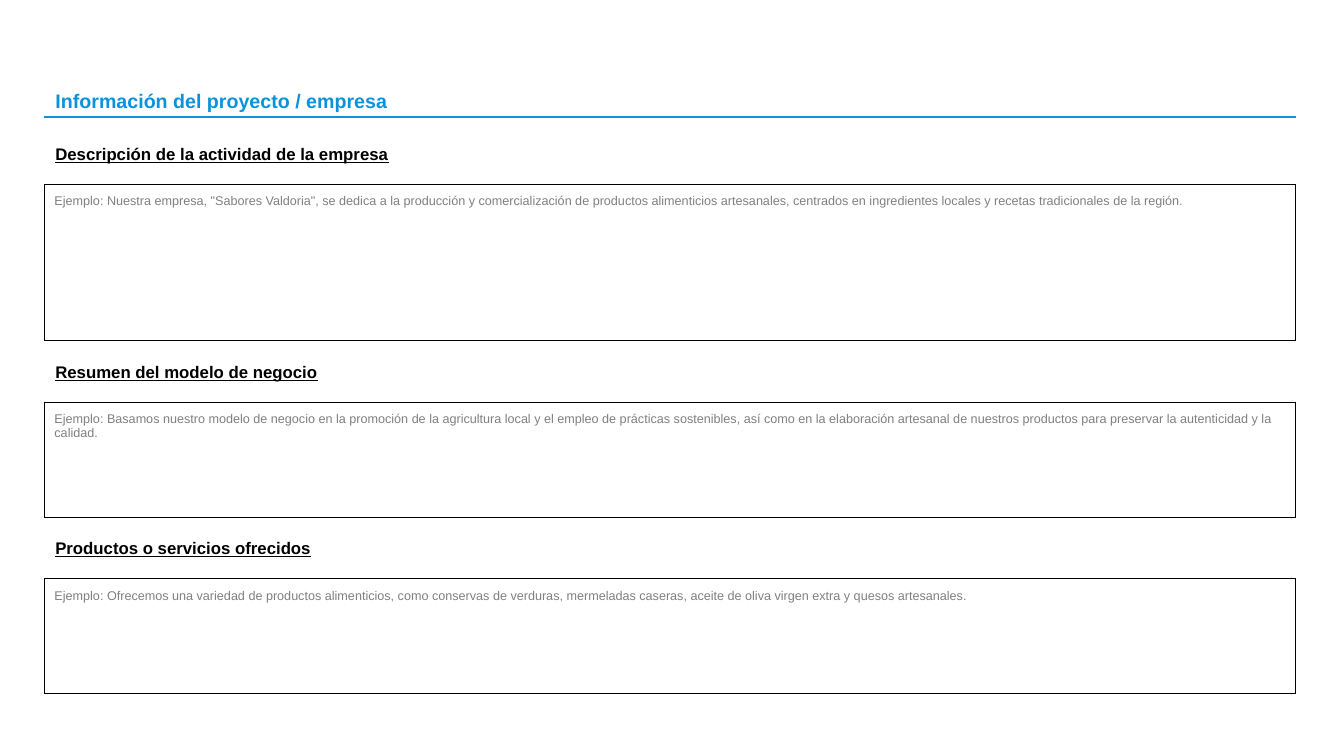
"""Build the project and company information form slide."""
from dataclasses import dataclass

import pptx
import pptx.dml.color
import pptx.enum.shapes
import pptx.enum.text
import pptx.oxml
import pptx.oxml.ns
import pptx.util
from pptx.util import Inches

TITLE = "Información del proyecto / empresa"
SECTIONS = [
    ("Descripción de la actividad de la empresa", 1.55,
     'Ejemplo: Nuestra empresa, "Sabores Valdoria", se dedica a la producción y '
     "comercialización de productos alimenticios artesanales, centrados en "
     "ingredientes locales y recetas tradicionales de la región."),
    ("Resumen del modelo de negocio", 1.14,
     "Ejemplo: Basamos nuestro modelo de negocio en la promoción de la agricultura "
     "local y el empleo de prácticas sostenibles, así como en la elaboración "
     "artesanal de nuestros productos para preservar la autenticidad y la calidad."),
    ("Productos o servicios ofrecidos", 1.14,
     "Ejemplo: Ofrecemos una variedad de productos alimenticios, como conservas de "
     "verduras, mermeladas caseras, aceite de oliva virgen extra y quesos artesanales."),
]


@dataclass(frozen=True)
class Theme:
    font: str = "Arial"
    accent: str = "0A92DD"
    ink: str = "000000"
    hint: str = "808080"
    paper: str = "FFFFFF"
    title_size: int = 14
    heading_size: int = 12
    hint_size: int = 9
    rule_width: float = 1.5
    border_width: int = 1


THEME = Theme()
LEFT, WIDTH = 0.44, 12.41
LABEL_LEFT, LABEL_WIDTH, LABEL_HEIGHT = 0.45, 4.46, 0.27
TITLE_TOP, RULE_TOP, FIRST_HEADING_TOP = 0.86, 1.16, 1.39
HEADING_TO_FIELD, FIELD_TO_HEADING = 0.44, 0.17
FIELD_INSET = 0.1


def color(value):
    return pptx.dml.color.RGBColor.from_string(value)


def write(frame, text, size, shade, bold=False, underline=False):
    frame.word_wrap = True
    para = frame.paragraphs[0]
    para.text = text
    para.alignment = pptx.enum.text.PP_ALIGN.LEFT
    font = para.font
    font.name, font.size = THEME.font, pptx.util.Pt(size)
    font.bold, font.underline = bold, underline
    font.color.rgb = color(shade)


def place_label(box, top, text, size, shade, underline=False):
    box.left, box.top = Inches(LABEL_LEFT), Inches(top)
    box.width, box.height = Inches(LABEL_WIDTH), Inches(LABEL_HEIGHT)
    frame = box.text_frame
    frame.auto_size = pptx.enum.text.MSO_AUTO_SIZE.NONE
    frame.vertical_anchor = pptx.enum.text.MSO_ANCHOR.MIDDLE
    write(frame, text, size, shade, True, underline)


def add_rule(page):
    rule = page.shapes.add_connector(
        pptx.enum.shapes.MSO_CONNECTOR.STRAIGHT,
        Inches(LEFT), Inches(RULE_TOP), Inches(LEFT + WIDTH), Inches(RULE_TOP))
    rule.line.color.rgb = color(THEME.accent)
    rule.line.width = pptx.util.Pt(THEME.rule_width)
    properties = rule._element.spPr
    properties.append(pptx.oxml.parse_xml(
        f"<a:effectLst {pptx.oxml.ns.nsdecls('a')}/>"))


def add_borders(cell):
    properties = cell._tc.get_or_add_tcPr()
    width = pptx.util.Pt(THEME.border_width)
    for side in ("lnL", "lnR", "lnT", "lnB"):
        properties.append(pptx.oxml.parse_xml(
            f'<a:{side} {pptx.oxml.ns.nsdecls("a")} w="{width}"><a:solidFill>'
            f'<a:srgbClr val="{THEME.ink}"/></a:solidFill></a:{side}>'))


def add_field(page, top, height, text):
    table = page.shapes.add_table(
        1, 1, Inches(LEFT), Inches(top), Inches(WIDTH), Inches(height)).table
    table.first_row = table.horz_banding = False
    cell = table.cell(0, 0)
    cell.margin_left = cell.margin_right = Inches(FIELD_INSET)
    cell.margin_top = cell.margin_bottom = Inches(FIELD_INSET)
    add_borders(cell)
    cell.fill.solid()
    cell.fill.fore_color.rgb = color(THEME.paper)
    write(cell.text_frame, text, THEME.hint_size, THEME.hint)


def main():
    deck = pptx.Presentation()
    deck.slide_width, deck.slide_height = Inches(13.33), Inches(7.5)
    page = deck.slides.add_slide(deck.slide_layouts.get_by_name("Title Only"))
    place_label(page.shapes.title, TITLE_TOP, TITLE, THEME.title_size, THEME.accent)
    add_rule(page)
    top = FIRST_HEADING_TOP
    for heading, height, example in SECTIONS:
        box = page.shapes.add_textbox(0, 0, 0, 0)
        place_label(box, top, heading, THEME.heading_size, THEME.ink, True)
        add_field(page, top + HEADING_TO_FIELD, height, example)
        top += HEADING_TO_FIELD + height + FIELD_TO_HEADING
    deck.save("out.pptx")


if __name__ == "__main__":
    main()
